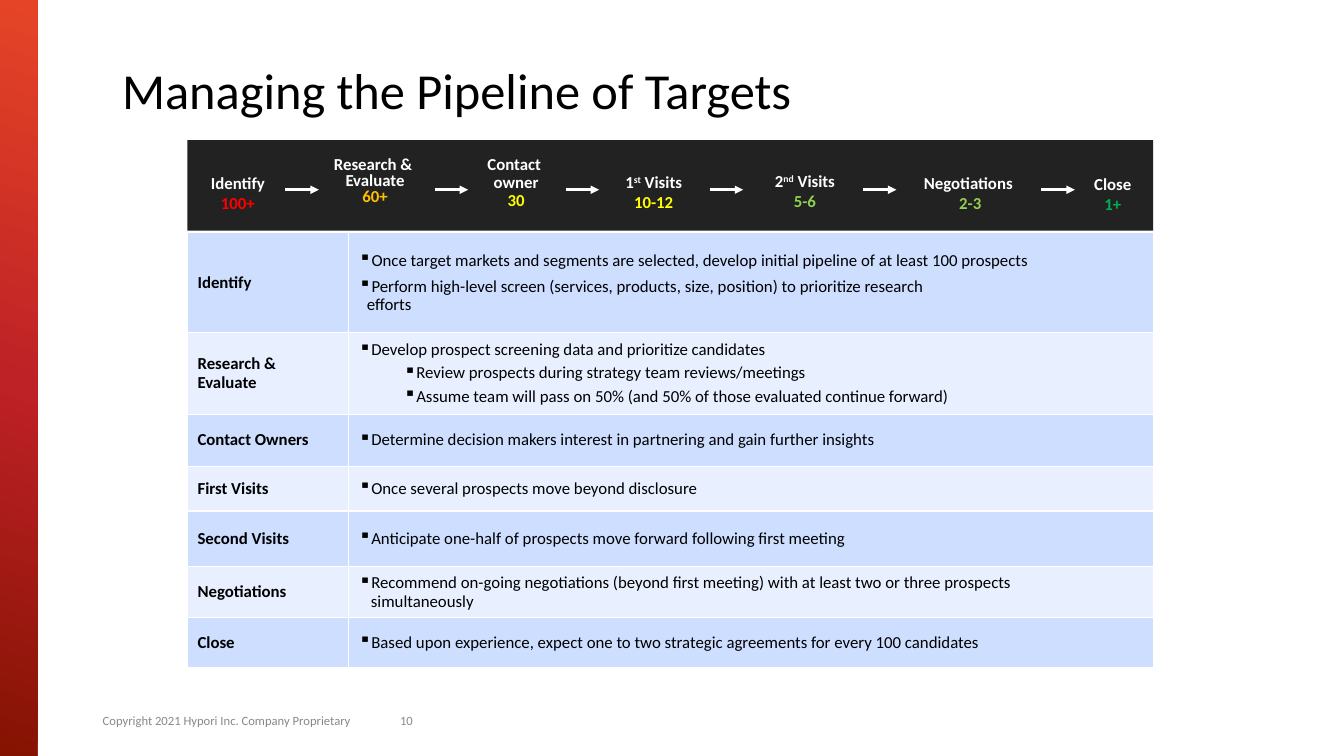
"""Build the slide on managing the pipeline of targets."""
from copy import deepcopy
from dataclasses import dataclass
from typing import Any, NamedTuple

from lxml import etree
from pptx import Presentation
from pptx import util as u
from pptx.dml import color as dml
from pptx.enum import shapes, text
from pptx.oxml import ns

BLACK = dml.RGBColor(0x00, 0x00, 0x00)
WHITE = dml.RGBColor(0xFF, 0xFF, 0xFF)
GREY = dml.RGBColor(0x88, 0x88, 0x88)
CHARCOAL = dml.RGBColor(0x22, 0x22, 0x23)
RED = dml.RGBColor(0xFF, 0x00, 0x00)
AMBER = dml.RGBColor(0xFF, 0xC0, 0x00)
YELLOW = dml.RGBColor(0xFF, 0xFF, 0x00)
LIME = dml.RGBColor(0x92, 0xD0, 0x50)
GREEN = dml.RGBColor(0x00, 0xB0, 0x50)
BLUE_ROW = dml.RGBColor(0xCD, 0xDE, 0xFF)
PALE_ROW = dml.RGBColor(0xE8, 0xEF, 0xFF)
EMBER = ((0, dml.RGBColor(0x85, 0x13, 0x02)),
         (0.49, dml.RGBColor(0xBE, 0x21, 0x26)),
         (1, dml.RGBColor(0xE5, 0x45, 0x26)))

SLIDE_WIDTH, SLIDE_HEIGHT = u.Inches(13.33), u.Inches(7.5)
TABLE_LEFT, TABLE_WIDTH, LABEL_WIDTH = 13.95, 71.85, 12
ARROW_LEFTS = (21.23, 32.33, 42.08, 52.8, 64.2, 77.48)
ARROW_Y, ARROW_LENGTH = 25.1, 2.5


class Phrase(NamedTuple):
    """A run of text; without a colour it takes that of its box."""
    words: str
    color: dml.RGBColor | None = None
    raised: bool = False


@dataclass(frozen=True)
class Line:
    """A paragraph; margin and hang are percentages of the slide's width."""
    phrases: tuple[Phrase, ...]
    spacing: float = 0.9
    before: float = 0
    margin: float = 0
    hang: float = 0
    level: int = 0


class Stage(NamedTuple):
    """A step of the pipeline header."""
    left: float
    top: float
    width: float
    lines: tuple[Line, ...]


class Row(NamedTuple):
    """A table row with its height as a percentage of the slide's height."""
    height: float
    label: str
    lines: tuple[Line, ...]


def plain(words: str, **layout: Any) -> Line:
    """Return a line of one phrase."""
    return Line((Phrase(words),), **layout)


def bullet(words: str, before: float = 0, hang: float = 0.75) -> Line:
    """Return a top-level bulleted line."""
    return plain(words, before=before, margin=hang, hang=hang)


def detail(words: str) -> Line:
    """Return a second-level bulleted line."""
    return plain(words, before=3.5, margin=4.05, hang=0.7, level=1)


def count(words: str, color: dml.RGBColor, **layout: Any) -> Line:
    """Return the coloured number of a stage."""
    return Line((Phrase(words, color),), **layout)


def visits(number: str, suffix: str) -> Line:
    """Return an ordinal heading with a raised suffix."""
    return Line((Phrase(number), Phrase(suffix, raised=True), Phrase(" Visits")), spacing=1)


TIGHT = {"spacing": 0.4, "before": 5.5}
STAGES = (
    Stage(13.65, 22.13, 8.1, (Line((Phrase("Identify "), Phrase("100+", RED)), spacing=1),)),
    Stage(22.28, 21.07, 11.25, (plain("Research & ", spacing=0.4),
                                plain("Evaluate", **TIGHT), count("60+", AMBER, **TIGHT))),
    Stage(34.65, 20, 7.5, (plain("Contact "), plain("owner"), count("30", YELLOW))),
    Stage(43.95, 22, 9.38, (visits("1", "st"), count("10-12", YELLOW, spacing=1))),
    Stage(55.2, 21.87, 9.38, (visits("2", "nd"), count("5-6", LIME, spacing=1))),
    Stage(65.93, 22.13, 12.53, (plain("Negotiations ", spacing=1), count("2-3", LIME, spacing=1))),
    Stage(79.05, 22.27, 7.5, (plain("Close", spacing=1), count("1+", GREEN, spacing=1))),
)
ROWS = (
    Row(13.2, "Identify", (
        bullet("Once target markets and segments are selected, develop initial pipeline "
               "of at least 100 prospects", hang=0.95),
        bullet("Perform high-level screen (services, products, size, position) "
               "to prioritize research", before=5.5, hang=0.95),
        plain("efforts", margin=0.6))),
    Row(10.8, "Research & Evaluate", (
        bullet("Develop prospect screening data and prioritize candidates"),
        detail("Review prospects during strategy team reviews/meetings"),
        detail("Assume team will pass on 50% (and 50% of those evaluated continue forward)"))),
    Row(6.93, "Contact Owners", (
        bullet("Determine decision makers interest in partnering and gain further insights"),)),
    Row(5.87, "First Visits", (bullet("Once several prospects move beyond disclosure"),)),
    Row(7.4, "Second Visits", (
        bullet("Anticipate one-half of prospects move forward following first meeting"),)),
    Row(6.73, "Negotiations", (
        bullet("Recommend on-going negotiations (beyond first meeting) with at least "
               "two or three prospects"),
        plain("simultaneously", margin=0.9))),
    Row(6.53, "Close", (
        bullet("Based upon experience, expect one to two strategic agreements "
               "for every 100 candidates"),)),
)


def across(percent: float) -> u.Emu:
    """Return a share of the slide's width."""
    return u.Emu(round(SLIDE_WIDTH * percent / 100))


def down(percent: float) -> u.Emu:
    """Return a share of the slide's height."""
    return u.Emu(round(SLIDE_HEIGHT * percent / 100))


def area(left: float, top: float, width: float, height: float) -> tuple[u.Emu, ...]:
    """Return a frame given in percentages of the slide."""
    return across(left), down(top), across(width), down(height)


def assign(target: Any, formats: dict[str, Any]) -> None:
    """Set each named attribute on the target."""
    for name, value in formats.items():
        setattr(target, name, value)


def write(frame: Any, lines: tuple[Line, ...], color: dml.RGBColor, size: float = 12,
          bold: bool = False, align: Any = text.PP_ALIGN.LEFT,
          anchor: Any = text.MSO_ANCHOR.MIDDLE) -> None:
    """Fill a text frame with formatted lines."""
    assign(frame, {"word_wrap": True, "vertical_anchor": anchor})
    for index, line in enumerate(lines):
        paragraph = frame.add_paragraph() if index else frame.paragraphs[0]
        assign(paragraph, {"alignment": align, "line_spacing": line.spacing,
                           "space_before": u.Pt(line.before), "level": line.level})
        properties = paragraph._p.get_or_add_pPr()
        properties.set("marL", str(across(line.margin)))
        properties.set("indent", str(-across(line.hang)))
        if line.hang:
            etree.SubElement(properties, ns.qn("a:buChar")).set("char", "▪")
        for phrase in line.phrases:
            run = paragraph.add_run()
            run.text = phrase.words
            assign(run.font, {"name": "Calibri", "size": u.Pt(size), "bold": bold})
            run.font.color.rgb = phrase.color or color
            if phrase.raised:
                run._r.get_or_add_rPr().set("baseline", "30000")


def add_block(slide: Any, frame: tuple[u.Emu, ...]) -> Any:
    """Add a rectangle without outline or shadow."""
    block = slide.shapes.add_shape(shapes.MSO_SHAPE.RECTANGLE, *frame)
    block.shadow.inherit = False
    block.line.fill.background()
    return block


def add_sidebar(slide: Any) -> None:
    """Add the glowing strip on the left edge."""
    fill = add_block(slide, area(0, 0, 2.8, 100)).fill
    fill.gradient()
    fill.gradient_angle = 70
    first = fill.gradient_stops[0]._gs
    first.addnext(deepcopy(first))
    for stop, (position, color) in zip(fill.gradient_stops, EMBER):
        stop.position = position
        stop.color.rgb = color


def add_arrow(slide: Any, left: float) -> None:
    """Add a white arrow between two stages."""
    arrow = slide.shapes.add_connector(shapes.MSO_CONNECTOR.STRAIGHT, across(left), down(ARROW_Y),
                                       across(left + ARROW_LENGTH), down(ARROW_Y))
    arrow.line.color.rgb = WHITE
    arrow.line.width = u.Pt(2)
    etree.SubElement(arrow.line._get_or_add_ln(), ns.qn("a:tailEnd")).set("type", "triangle")
    etree.SubElement(arrow._element.spPr, ns.qn("a:effectLst"))


def style_cell(cell: Any, color: dml.RGBColor) -> None:
    """Give a cell its fill and thin white borders."""
    properties = cell._tc.get_or_add_tcPr()
    for side in ("L", "R", "T", "B"):
        border = etree.SubElement(properties, ns.qn(f"a:ln{side}"), w=str(u.Pt(1)))
        solid = etree.SubElement(border, ns.qn("a:solidFill"))
        etree.SubElement(solid, ns.qn("a:srgbClr")).set("val", str(WHITE))
    cell.fill.solid()
    cell.fill.fore_color.rgb = color


def add_steps(slide: Any) -> None:
    """Add the table that explains each stage."""
    frame = area(TABLE_LEFT, 30.8, TABLE_WIDTH, sum(row.height for row in ROWS))
    steps = slide.shapes.add_table(len(ROWS), 2, *frame).table
    assign(steps, {"first_row": False, "horz_banding": False})
    for column, width in zip(steps.columns, (LABEL_WIDTH, TABLE_WIDTH - LABEL_WIDTH)):
        column.width = across(width)
    for index, row in enumerate(ROWS):
        steps.rows[index].height = down(row.height)
        for column, lines in enumerate(((plain(row.label),), row.lines)):
            cell = steps.cell(index, column)
            style_cell(cell, PALE_ROW if index % 2 else BLUE_ROW)
            write(cell.text_frame, lines, BLACK, bold=column == 0)
            cell.vertical_anchor = text.MSO_ANCHOR.MIDDLE


def main() -> None:
    """Build and save the slide."""
    deck = Presentation()
    assign(deck, {"slide_width": SLIDE_WIDTH, "slide_height": SLIDE_HEIGHT})
    slide = deck.slides.add_slide(deck.slide_layouts[5])
    add_sidebar(slide)
    heading = slide.shapes.title
    assign(heading, dict(zip(("left", "top", "width", "height"), area(8.33, 8, 79.65, 8.53))))
    write(heading.text_frame, (plain("Managing the Pipeline of Targets"),), BLACK, size=36)
    for left, width, words in ((6.9, 21.38, "Copyright 2021 Hypori Inc. Company Proprietary"),
                               (29.03, 6.23, "10")):
        footer = slide.shapes.add_textbox(*area(left, 92.67, width, 5.33))
        write(footer.text_frame, (plain(words, spacing=1),), GREY, size=9)
    band = add_block(slide, area(TABLE_LEFT, 18.53, TABLE_WIDTH, 12))
    band.fill.solid()
    band.fill.fore_color.rgb = CHARCOAL
    for stage in STAGES:
        box = slide.shapes.add_textbox(*area(stage.left, stage.top, stage.width, 6.67))
        write(box.text_frame, stage.lines, WHITE, bold=True, align=text.PP_ALIGN.CENTER,
              anchor=text.MSO_ANCHOR.TOP)
    for left in ARROW_LEFTS:
        add_arrow(slide, left)
    add_steps(slide)
    deck.save("out.pptx")


if __name__ == "__main__":
    main()
